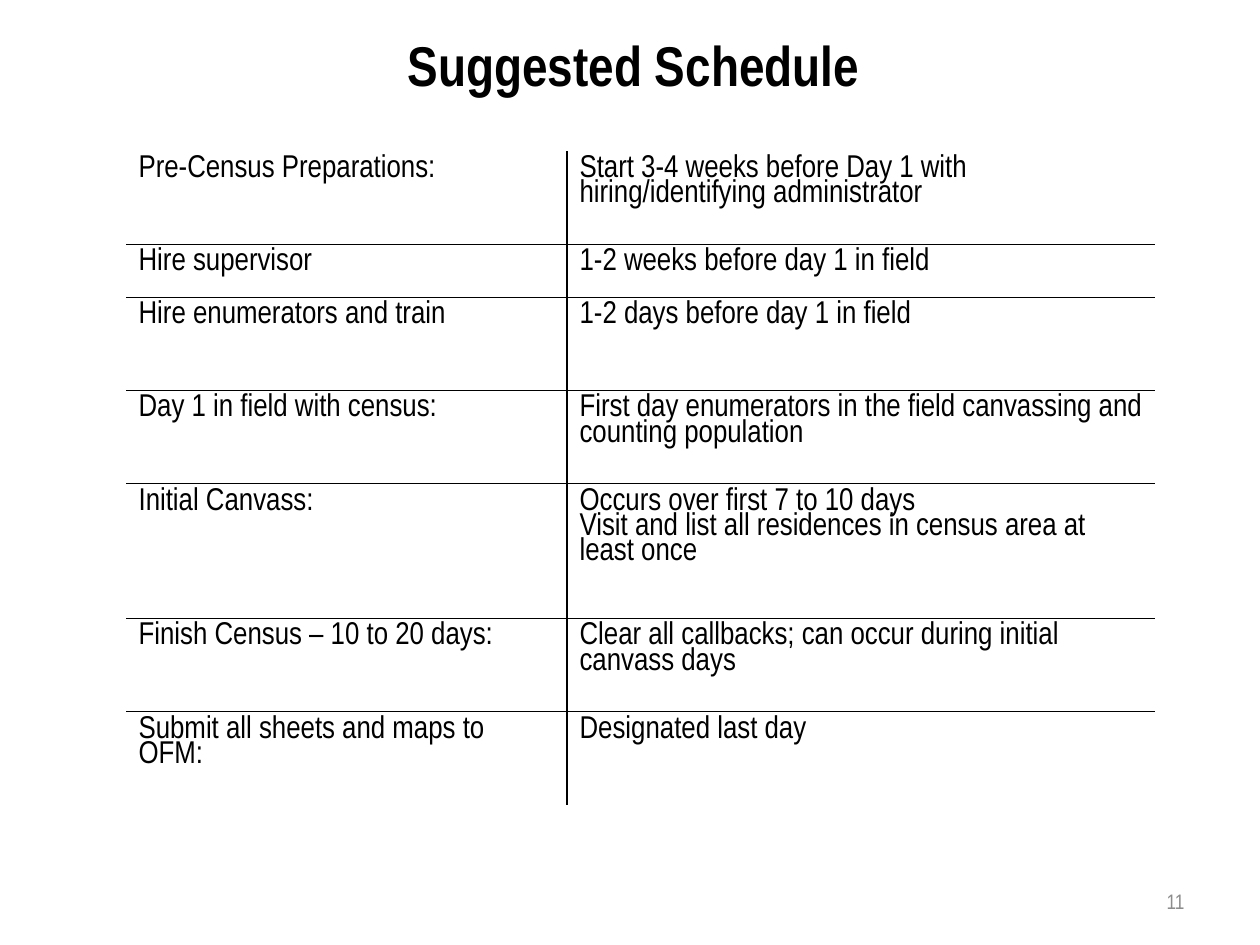
from pptx import Presentation
from pptx.dml.color import RGBColor
from pptx.enum.text import MSO_ANCHOR, PP_ALIGN
from pptx.oxml.ns import qn
from pptx.util import Inches, Pt
from lxml import etree

TOP, MIDDLE = MSO_ANCHOR.TOP, MSO_ANCHOR.MIDDLE
CENTER, RIGHT = PP_ALIGN.CENTER, PP_ALIGN.RIGHT
TITLE_ONLY = 5
FONT = "Arial Narrow"
BLACK, GRAY = "000000", "8C8C8C"

COLUMN_WIDTHS = [3.5, 4.67]
# Row height, step, timing paragraphs
SCHEDULE = [
    (0.74, "Pre-Census Preparations:",
     ["Start 3-4 weeks before Day 1 with hiring/identifying administrator"]),
    (0.42, "Hire supervisor", ["1-2 weeks before day 1 in field"]),
    (0.74, "Hire enumerators and train", ["1-2 days before day 1 in field"]),
    (0.74, "Day 1 in field with census:",
     ["First day enumerators in the field canvassing and counting population"]),
    (1.07, "Initial Canvass:",
     ["Occurs over first 7 to 10 days",
      "Visit and list all residences in census area at least once"]),
    (0.74, "Finish Census – 10 to 20 days:",
     ["Clear all callbacks; can occur during initial canvass days"]),
    (0.74, "Submit all sheets and maps to OFM:", ["Designated last day"]),
]


def color(value):
    return RGBColor.from_string(value)


def add_span(para, text, size, shade=BLACK, bold=False):
    span = para.add_run()
    span.text = text
    span.font.name = FONT
    span.font.size = Pt(size)
    span.font.bold = bold
    span.font.color.rgb = color(shade)


def add_title(page, text):
    title = page.shapes.title
    title.left, title.top = Inches(0.75), Inches(0.25)
    title.width, title.height = Inches(8.5), Inches(0.58)
    frame = title.text_frame
    frame.word_wrap = True
    frame.vertical_anchor = TOP
    para = frame.paragraphs[0]
    para.alignment = CENTER
    para.line_spacing = 0.9
    para.space_before = Pt(10)
    properties = para._p.get_or_add_pPr()
    properties.set("marL", str(Inches(0.06)))
    properties.set("indent", "0")
    add_span(para, text, 32, bold=True)


def set_borders(cell, drawn):
    """Draw 1 pt lines on the sides in drawn (L, R, T, B) and clear the others."""
    properties = cell._tc.get_or_add_tcPr()
    for position, side in enumerate("LRTB"):
        line = etree.Element(qn(f"a:ln{side}"), w=str(Pt(1)))
        if side in drawn:
            fill = etree.SubElement(line, qn("a:solidFill"))
            etree.SubElement(fill, qn("a:srgbClr"), val=BLACK)
        else:
            etree.SubElement(line, qn("a:noFill"))
        properties.insert(position, line)


def fill_cell(cell, lines, borders):
    cell.fill.background()
    frame = cell.text_frame
    for index, text in enumerate(lines):
        para = frame.add_paragraph() if index else frame.paragraphs[0]
        para.line_spacing = 0.85
        add_span(para, text, 18)
    set_borders(cell, borders)


def add_schedule(page):
    heights = [height for height, _, _ in SCHEDULE]
    table = page.shapes.add_table(
        len(SCHEDULE), len(COLUMN_WIDTHS), Inches(1), Inches(1.2),
        Inches(sum(COLUMN_WIDTHS)), Inches(sum(heights))).table
    table.first_row = False
    table.horz_banding = False
    for column, width in zip(table.columns, COLUMN_WIDTHS):
        column.width = Inches(width)
    last = len(SCHEDULE) - 1
    for index, (height, step, timing) in enumerate(SCHEDULE):
        table.rows[index].height = Inches(height)
        rules = ("T" if index > 0 else "") + ("B" if index < last else "")
        fill_cell(table.cell(index, 0), [step], rules + "R")
        fill_cell(table.cell(index, 1), timing, rules + "L")


def add_page_number(page, number):
    box = page.shapes.add_textbox(
        Inches(7.17), Inches(6.95), Inches(2.33), Inches(0.4))
    frame = box.text_frame
    frame.word_wrap = True
    frame.vertical_anchor = MIDDLE
    para = frame.paragraphs[0]
    para.alignment = RIGHT
    add_span(para, number, 12, GRAY)


def main():
    deck = Presentation()
    deck.slide_width, deck.slide_height = Inches(10), Inches(7.5)
    page = deck.slides.add_slide(deck.slide_layouts[TITLE_ONLY])
    add_title(page, "Suggested Schedule")
    add_schedule(page)
    add_page_number(page, "11")
    deck.save("out.pptx")


if __name__ == "__main__":
    main()
